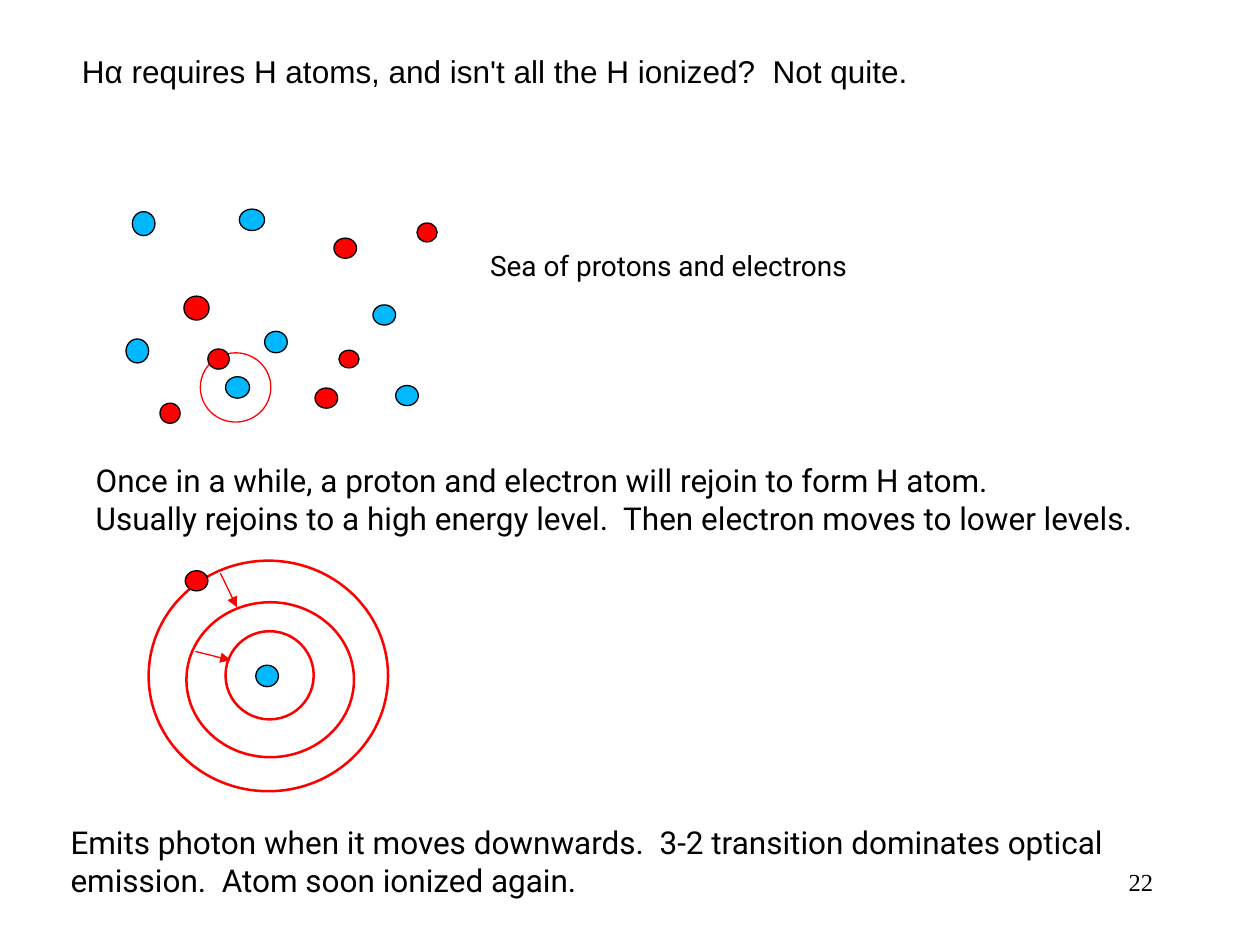
from typing import NamedTuple

from lxml import etree
from pptx import Presentation
from pptx.dml.color import RGBColor
from pptx.enum import shapes, text
from pptx.oxml.ns import qn
from pptx.util import Inches, Pt

# Grid: 100 columns by 75 rows of square cells
COLS, ROWS = 100, 75
BLACK, RED, BLUE = "000000", "FF0000", "00B8FF"

prs = Presentation()
prs.slide_width, prs.slide_height = Inches(10), Inches(7.5)
slide = prs.slides.add_slide(prs.slide_layouts[5])


class Box(NamedTuple):
    col: float
    row: float
    wide: float
    high: float


class Dot(NamedTuple):
    box: Box
    fill: str


class Note(NamedTuple):
    box: Box
    words: str
    size: float = 18
    font: str = "Roboto"


class Jump(NamedTuple):
    start: tuple[float, float]
    end: tuple[float, float]


def hue(code: str) -> RGBColor:
    return RGBColor.from_string(code)


def across(cols: float) -> int:
    return round(prs.slide_width * cols / COLS)


def down(rows: float) -> int:
    return round(prs.slide_height * rows / ROWS)


def place(box: Box) -> tuple[int, int, int, int]:
    return across(box.col), down(box.row), across(box.wide), down(box.high)


def write(shape, note: Note, align=text.PP_ALIGN.LEFT, inset: bool = False) -> None:
    shape.left, shape.top, shape.width, shape.height = place(note.box)
    frame = shape.text_frame
    frame.text = note.words
    frame.word_wrap = True
    frame.auto_size = text.MSO_AUTO_SIZE.NONE
    frame.vertical_anchor = text.MSO_ANCHOR.TOP
    if not inset:
        frame.margin_left = frame.margin_right = 0
        frame.margin_top = frame.margin_bottom = 0
    for para in frame.paragraphs:
        para.alignment = align
        for run in para.runs:
            run.font.size, run.font.name = Pt(note.size), note.font
            run.font.color.rgb = hue(BLACK)


def label(note: Note, **style) -> None:
    write(slide.shapes.add_textbox(*place(note.box)), note, **style)


def oval(box: Box, line: str, weight: float = 0.75, fill: str | None = None) -> None:
    shape = slide.shapes.add_shape(shapes.MSO_SHAPE.OVAL, *place(box))
    shape.shadow.inherit = False
    if fill:
        shape.fill.solid()
        shape.fill.fore_color.rgb = hue(fill)
    else:
        shape.fill.background()
    shape.line.color.rgb = hue(line)
    shape.line.width = Pt(weight)


def arrow(jump: Jump) -> None:
    (x1, y1), (x2, y2) = jump.start, jump.end
    line = slide.shapes.add_connector(
        shapes.MSO_CONNECTOR.STRAIGHT, across(x1), down(y1), across(x2), down(y2))
    line.line.color.rgb = hue(RED)
    line.line.width = Pt(0.75)
    props = line._element.spPr
    etree.SubElement(line.line._get_or_add_ln(), qn("a:tailEnd"), type="triangle")
    etree.SubElement(props, qn("a:effectLst"))


# Title
write(slide.shapes.title, Note(
    Box(6.5, 4.1, 74.2, 3),
    "Hα requires H atoms, and isn't all the H ionized?  Not quite.", font="Arial"))

# Sea of protons (blue) and electrons (red)
sea = [
    Dot(Box(10.5, 16.8, 1.8, 1.9), BLUE),
    Dot(Box(14.6, 23.5, 2, 1.9), RED),
    Dot(Box(26.5, 18.9, 1.8, 1.6), RED),
    Dot(Box(21, 26.3, 1.8, 1.7), BLUE),
    Dot(Box(26.9, 27.8, 1.6, 1.4), RED),
    Dot(Box(10, 26.9, 1.8, 1.9), BLUE),
    Dot(Box(19, 16.6, 2, 1.7), BLUE),
    Dot(Box(25, 30.8, 1.8, 1.6), RED),
    Dot(Box(29.6, 24.2, 1.8, 1.6), BLUE),
    Dot(Box(12.7, 32, 1.6, 1.6), RED),
    Dot(Box(33.1, 17.7, 1.6, 1.5), RED),
    Dot(Box(31.4, 30.6, 1.8, 1.6), BLUE),
    Dot(Box(17.9, 29.9, 1.9, 1.7), BLUE),
]
for dot in sea:
    oval(dot.box, BLACK, fill=dot.fill)

# Rejoined atom: orbit, then its electron
oval(Box(15.9, 28, 5.6, 5.5), RED)
oval(Box(16.5, 27.7, 1.7, 1.6), BLACK, fill=RED)

# Energy levels around the proton
oval(Box(20.3, 52.8, 1.8, 1.7), BLACK, fill=BLUE)
levels = [Box(17.9, 50.1, 7, 7), Box(11.8, 44.5, 19, 18.3), Box(14.8, 47.8, 13.3, 12.3)]
for level in levels:
    oval(level, RED, 1.45)
oval(Box(14.7, 45.3, 1.8, 1.6), BLACK, fill=RED)

# Electron jumps to lower levels
for jump in (Jump((17.5, 45.5), (18.8, 48.2)), Jump((15.5, 51.7), (18.3, 52.4))):
    arrow(jump)

# Explanations
notes = [
    Note(Box(7.6, 36.6, 86.6, 6.1),
         "Once in a while, a proton and electron will rejoin to form H atom.\n"
         "Usually rejoins to a high energy level.  Then electron moves to lower levels."),
    Note(Box(5.6, 65.3, 86.9, 6.1),
         "Emits photon when it moves downwards.  3-2 transition dominates optical "
         "emission.  Atom soon ionized again."),
    Note(Box(38.9, 19.7, 31.1, 2.7), "Sea of protons and electrons", 16),
]
for note in notes:
    label(note)

# Page number
label(Note(Box(71.7, 68.3, 20.8, 5), "22", 14, "Times New Roman"),
      align=text.PP_ALIGN.RIGHT, inset=True)

prs.save("out.pptx")
